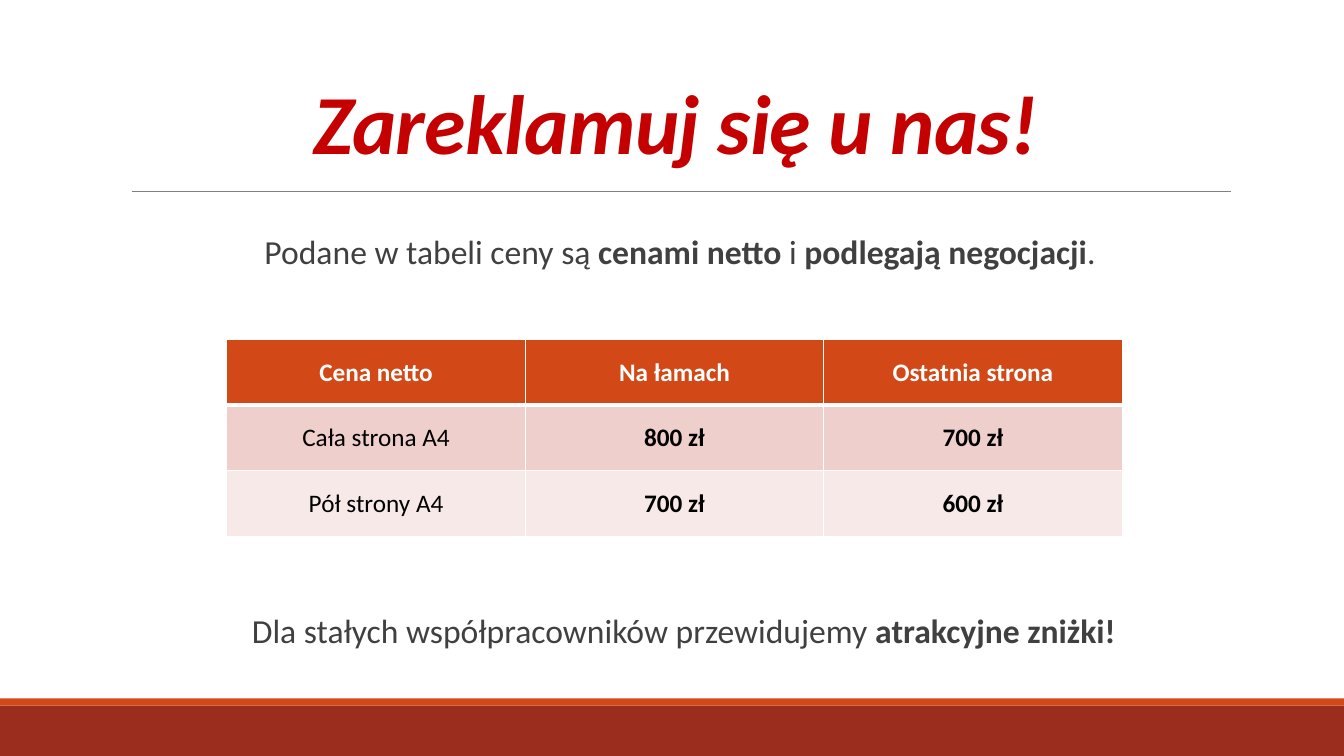
from lxml import etree
from pptx import Presentation, util as u
from pptx.dml.color import RGBColor
from pptx.enum import shapes, text
from pptx.oxml.ns import qn

PX = 9144  # 100 px to the inch
FONT = "Calibri"
COLORS = {
    "footer": "9B2D1F", "accent": "D34817", "rule": "808080",
    "title": "C40000", "body": "404040", "white": "FFFFFF",
    "black": "000000", "row_dark": "EFCFCC", "row_light": "F7E9E8",
}
PRICES = [
    ["Cena netto", "Na łamach", "Ostatnia strona"],
    ["Cała strona A4", "800 zł", "700 zł"],
    ["Pół strony A4", "700 zł", "600 zł"],
]


def px(*lengths):
    return [u.Emu(length * PX) for length in lengths]


def color(name):
    return RGBColor.from_string(COLORS[name])


def write(frame, spans, *, size, fill, italic=False, spacing=None, tracking=None):
    """Fill a frame with one centred paragraph of (words, bold) spans."""
    para = frame.paragraphs[0]
    para.alignment = text.PP_ALIGN.CENTER
    if spacing:
        para.line_spacing = spacing
    for words, bold in spans:
        span = para.add_run()
        span.text = words
        font = span.font
        font.name, font.size = FONT, u.Pt(size)
        font.bold, font.italic = bold, italic
        font.color.rgb = color(fill)
        if tracking:
            span._r.get_or_add_rPr().set("spc", str(tracking))
    return para


def add_text_box(page, box):
    frame = page.shapes.add_textbox(*px(*box)).text_frame
    frame.word_wrap = True
    return frame


def add_band(page, box, fill):
    band = page.shapes.add_shape(shapes.MSO_SHAPE.RECTANGLE, *px(*box))
    band.shadow.inherit = False
    band.fill.solid()
    band.fill.fore_color.rgb = color(fill)
    band.line.fill.background()


def add_footer(page, box):
    left, top, width, height = box
    stripe = 7
    add_band(page, (left, top + stripe, width, height - stripe), "footer")
    add_band(page, (left, top, width, stripe), "accent")


def add_title(page, box):
    """Place the heading and the rule beneath it."""
    left, top, width, height = box
    rule_y = top + height + 15
    rule = page.shapes.add_connector(
        shapes.MSO_CONNECTOR.STRAIGHT,
        *px(left + 11, rule_y, left + width + 1, rule_y))
    rule.line.color.rgb = color("rule")
    rule.line.width = u.Pt(0.5)
    etree.SubElement(rule._element.spPr, qn("a:effectLst"))
    frame = add_text_box(page, box)
    frame.vertical_anchor = text.MSO_ANCHOR.BOTTOM
    write(frame, [("Zareklamuj się u nas!", True)], size=60, fill="title",
          italic=True, spacing=0.85, tracking=-50)


def add_note(page, box, spans):
    frame = add_text_box(page, box)
    frame.margin_left = frame.margin_right = 0
    para = write(frame, spans, size=24, fill="body", spacing=0.9)
    para.space_before, para.space_after = u.Pt(12), u.Pt(2)
    layout = para._p.get_or_add_pPr()
    indent = 10 * PX
    layout.set("marL", str(indent))
    layout.set("indent", str(-indent))
    etree.SubElement(layout, qn("a:buChar"), char=" ")


def set_borders(cell, **widths):
    """Draw white borders; widths in points are keyed by side: L, R, T, B."""
    layout = cell._tc.get_or_add_tcPr()
    for side, width in widths.items():
        line = etree.SubElement(layout, qn(f"a:ln{side}"), w=str(u.Pt(width)))
        paint = etree.SubElement(line, qn("a:solidFill"))
        etree.SubElement(paint, qn("a:srgbClr"), val=COLORS["white"])


def add_price_table(page, box):
    table = page.shapes.add_table(len(PRICES), len(PRICES[0]), *px(*box)).table
    fills = ["accent", "row_dark", "row_light"]
    for row, values in enumerate(PRICES):
        header = row == 0
        for column, value in enumerate(values):
            cell = table.cell(row, column)
            set_borders(cell, L=1, R=1, T=3 if row == 1 else 1, B=3 if header else 1)
            cell.fill.solid()
            cell.fill.fore_color.rgb = color(fills[row])
            cell.vertical_anchor = text.MSO_ANCHOR.MIDDLE
            write(cell.text_frame, [(value, header or column > 0)], size=18,
                  fill="white" if header else "black")


def build_offer(deck):
    page = deck.slides.add_slide(deck.slide_layouts[6])
    add_footer(page, (0, 693, 1333, 57))
    add_title(page, (120, 31, 1100, 144))
    add_note(page, (120, 229, 1100, 44), [
        ("Podane w tabeli ceny są", False), (" cenami netto", True),
        (" i ", False), ("podlegają negocjacji", True), (". ", False)])
    add_note(page, (120, 605, 1100, 44), [
        ("Dla stałych współpracowników przewidujemy ", False),
        ("atrakcyjne zniżki!", True)])
    add_price_table(page, (225, 337, 888, 195))


def main():
    deck = Presentation()
    deck.slide_width, deck.slide_height = px(1333, 750)
    build_offer(deck)
    deck.save("out.pptx")


if __name__ == "__main__":
    main()
